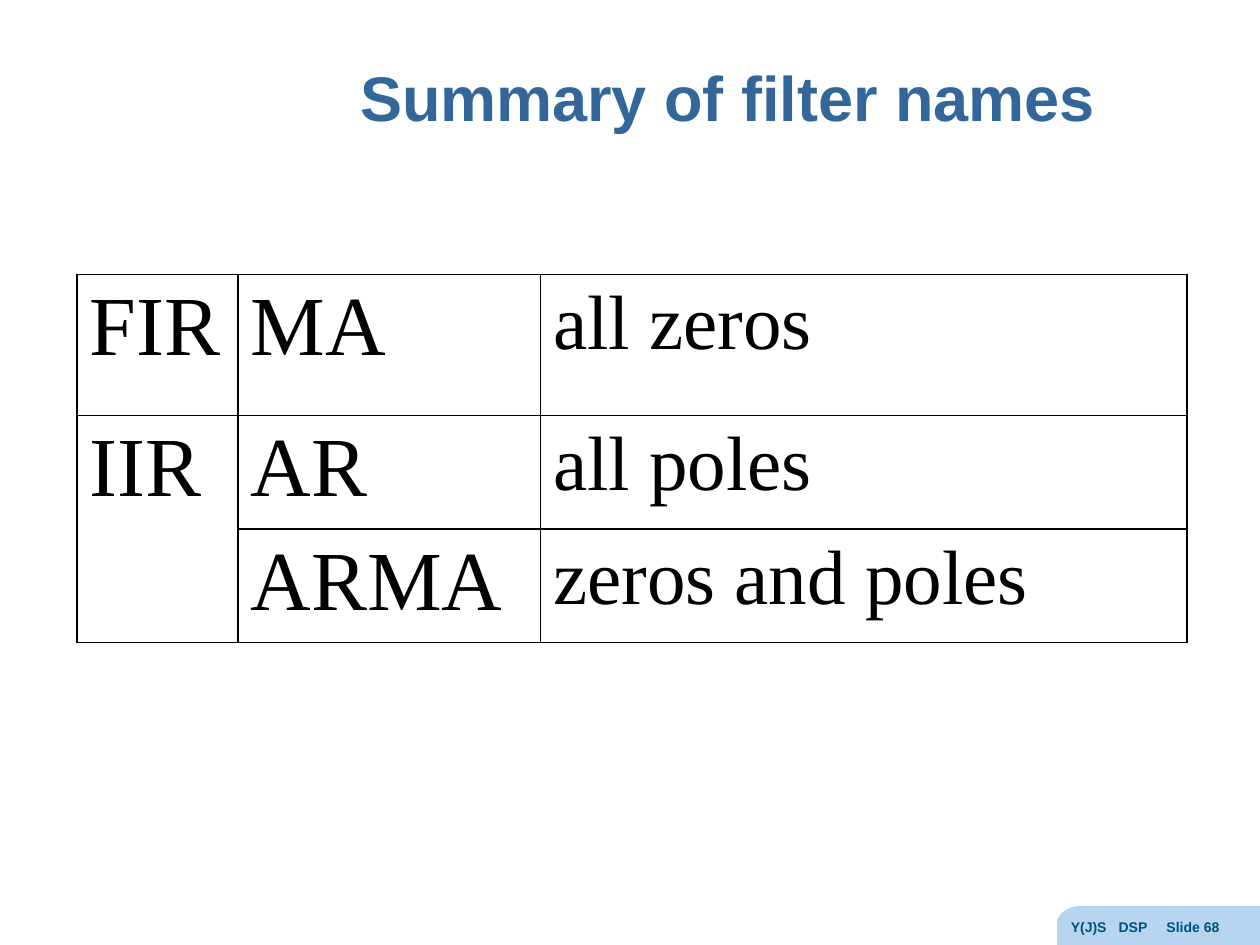
from lxml import etree
from pptx import Presentation, util as u
from pptx.dml.color import RGBColor
from pptx.enum import text
from pptx.oxml import ns

TITLE = "Summary of filter names"
FOOT = ["Y(J)S", "DSP", "Slide 68"]
ROWS = [
    ("FIR", "MA", "all zeros"),
    ("IIR", "AR", "all poles"),
    ("", "ARMA", "zeros and poles"),
]
OPEN = {(1, 0): "B", (2, 0): "T"}  # sides without a line, by row and column
COLS = [1.28, 2.4, 5.13]
HIGH = [1.12, 0.84, 0.84]
SIZES = [48, 48, 44]
# Outline of the footer tab, in hundredths of an inch
TAB = [(1000, 719), (1000, 750), (839, 750), (839, 734), (839, 730),
       (842, 725), (846, 722), (851, 720), (855, 719)]
STEP = 0.38  # gap between footer tab stops
HUE = {"title": "336699", "foot": "005081", "tab": "B7D5EF", "ink": "000000"}


def write(par, words, size, face, hue, bold):
    run = par.add_run()
    run.text = words
    font = run.font
    font.size, font.name, font.bold = u.Pt(size), face, bold
    font.color.rgb = RGBColor.from_string(HUE[hue])


def add_box(left, top, width, height):
    box = slide.shapes.add_textbox(*map(u.Inches, (left, top, width, height)))
    box.text_frame.word_wrap = True
    return box.text_frame


def rule(cell, bare):
    """Give the cell a thin line on each side that is not in bare."""
    props = cell._tc.get_or_add_tcPr()
    for spot, side in enumerate("LRTB"):
        line = etree.Element(ns.qn(f"a:ln{side}"), w=str(u.Pt(1)))
        if side in bare:
            etree.SubElement(line, ns.qn("a:noFill"))
        else:
            fill = etree.SubElement(line, ns.qn("a:solidFill"))
            etree.SubElement(fill, ns.qn("a:srgbClr"), val=HUE["ink"])
        props.insert(spot, line)


prs = Presentation()
prs.slide_width, prs.slide_height = u.Inches(10), u.Inches(7.5)
slide = prs.slides.add_slide(prs.slide_layouts[6])

# Footer tab
pen = slide.shapes.build_freeform(*TAB[0], scale=u.Inches(0.01))
pen.add_line_segments(TAB[1:], close=True)
tab = pen.convert_to_shape()
tab.shadow.inherit = False
tab.fill.solid()
tab.fill.fore_color.rgb = RGBColor.from_string(HUE["tab"])
tab.line.fill.background()

# Title
frame = add_box(2.12, 0.18, 7.31, 1.25)
frame.vertical_anchor = text.MSO_ANCHOR.MIDDLE
par = frame.paragraphs[0]
par.alignment, par.line_spacing = text.PP_ALIGN.CENTER, 0.9
write(par, TITLE, 36, "Arial", "title", True)

# Footer text
par = add_box(8.4, 7.24, 1.6, 0.26).paragraphs[0]
stops = etree.SubElement(par._p.get_or_add_pPr(), ns.qn("a:tabLst"))
for n in range(1, len(FOOT)):
    etree.SubElement(stops, ns.qn("a:tab"), pos=str(u.Inches(n * STEP)), algn="l")
write(par, "\t".join(FOOT), 8, "Arial", "foot", True)

# Filter table
grid = slide.shapes.add_table(
    len(ROWS), len(COLS), u.Inches(0.61), u.Inches(2.18),
    u.Inches(sum(COLS)), u.Inches(sum(HIGH))).table
grid.first_row = grid.horz_banding = False
for col, width in zip(grid.columns, COLS):
    col.width = u.Inches(width)
for row, height in zip(grid.rows, HIGH):
    row.height = u.Inches(height)
for r, row in enumerate(ROWS):
    for c, words in enumerate(row):
        cell = grid.cell(r, c)
        cell.fill.background()
        rule(cell, OPEN.get((r, c), ""))
        if words:
            write(cell.text_frame.paragraphs[0], words, SIZES[c],
                  "Times New Roman", "ink", False)

prs.save("out.pptx")
